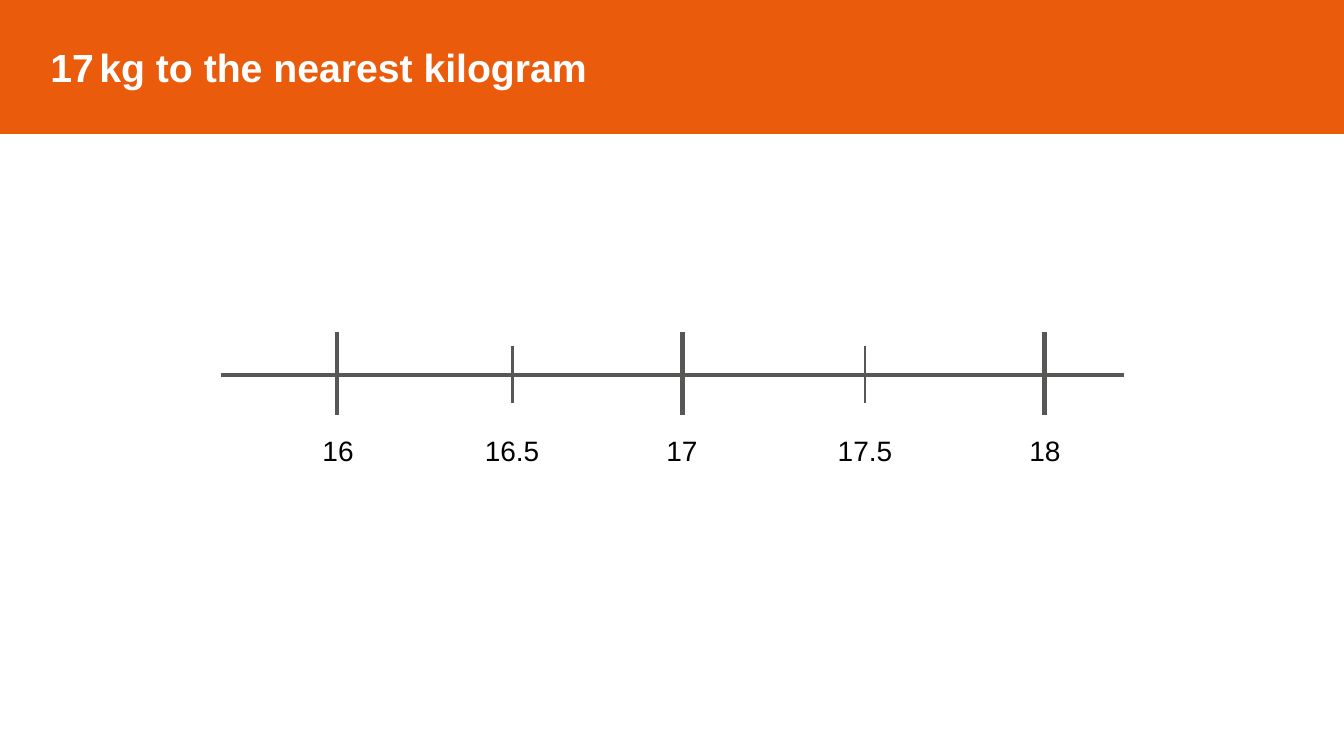
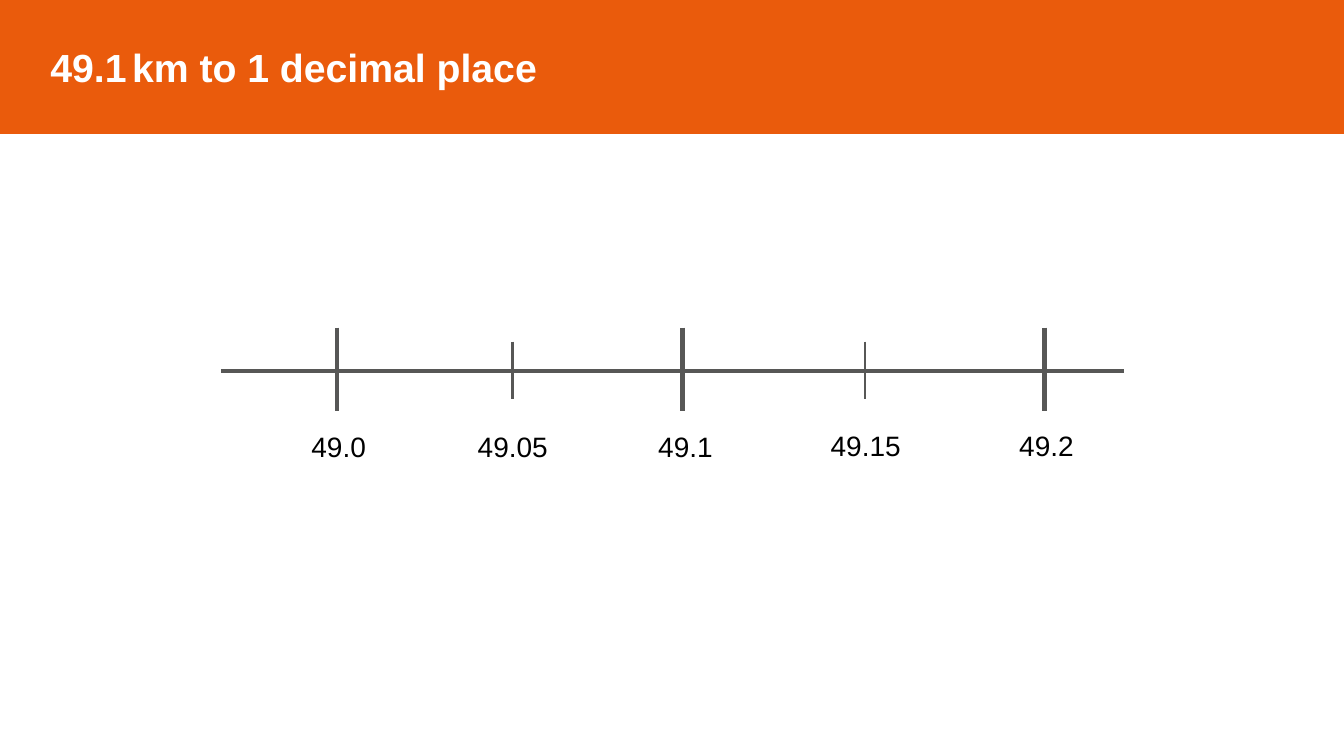
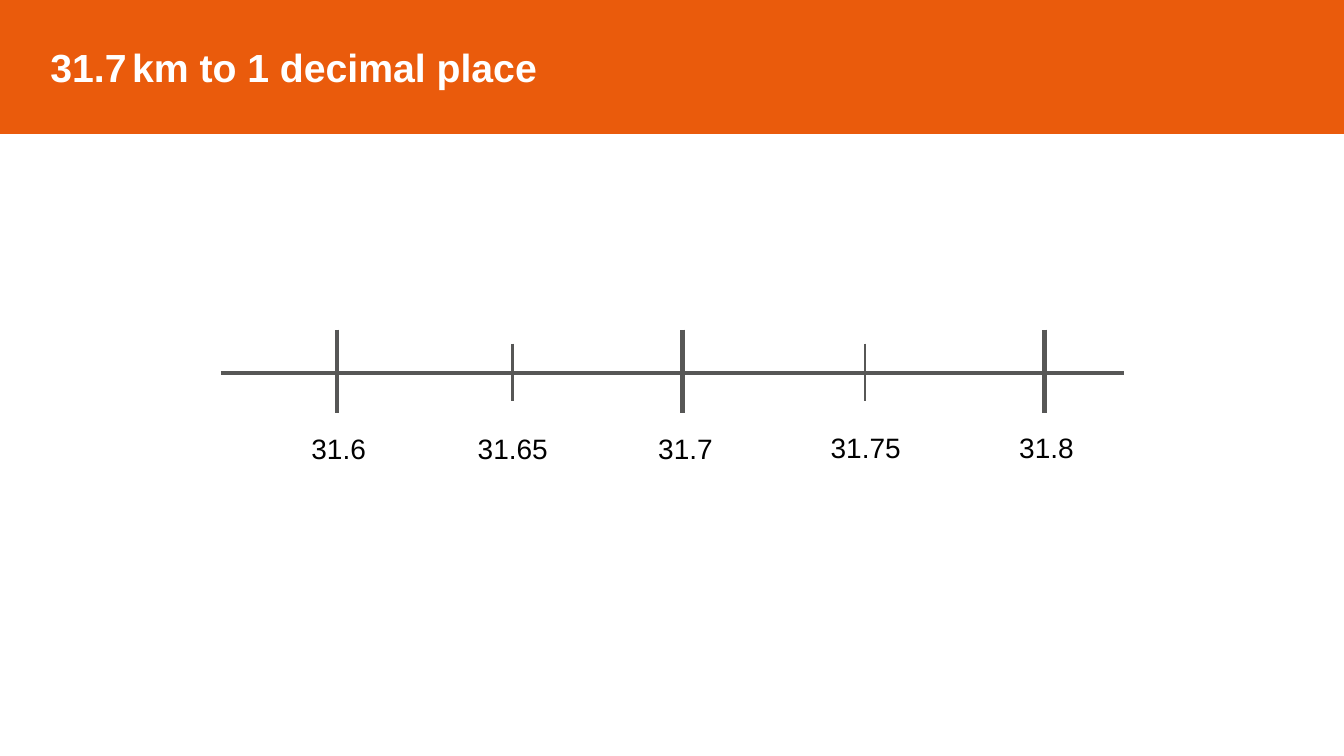
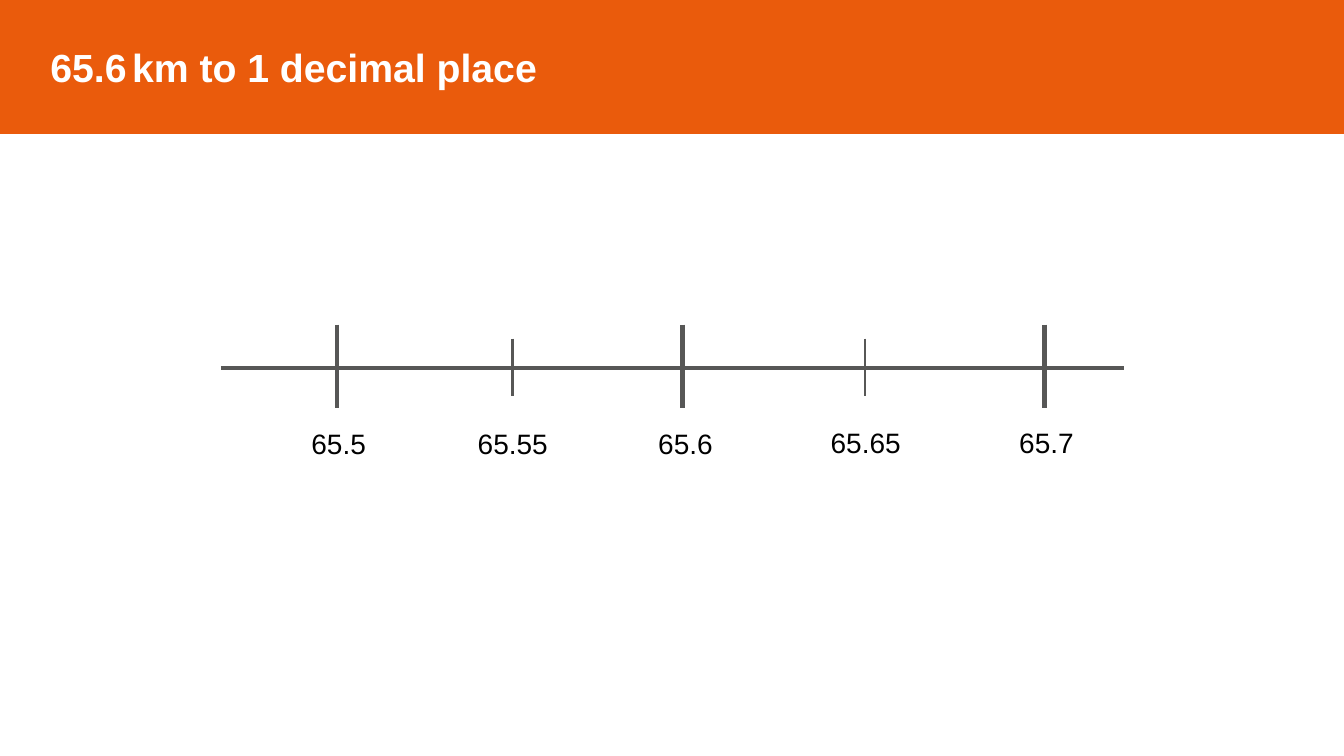
"""Build four slides that show rounded measurements on number lines."""
import pptx
import pptx.dml.color
import pptx.enum.shapes
import pptx.enum.text
import pptx.oxml
import pptx.util

PX = 9144
FONT = "Arial"
COLOURS = {"band": "EA5B0C", "line": "575756", "title": "FFFFFF", "label": "000000"}
SLIDE_WIDTH, SLIDE_HEIGHT, BAND_HEIGHT = 1333, 750, 132
AXIS_LEFT, AXIS_RIGHT = 219, 1115
TICKS = (334, 508, 677, 858, 1036)
MAJOR_TICK = {"above": 43, "below": 40, "weight": 3}
MINOR_TICK = {"above": 29, "below": 28, "weight": 2}
LABEL_DROP, LABEL_HEIGHT = 53, 44
LABEL_WIDTHS = {2: 51, 4: 75, 5: 90}
WHOLE_LEFTS = (310, 471, 651, 821, 1011)
DECIMAL_LEFTS = (299, 464, 643, 814, 1001)
WHOLE_DROPS = (LABEL_DROP,) * 5
DECIMAL_DROPS = (LABEL_DROP,) * 3 + (LABEL_DROP - 1,) * 2
SLIDES = (
    ("17", "kg to the nearest kilogram", 372, ("16", "16.5", "17", "17.5", "18")),
    ("49.1", "km to 1 decimal place", 368, ("49.0", "49.05", "49.1", "49.15", "49.2")),
    ("31.7", "km to 1 decimal place", 370, ("31.6", "31.65", "31.7", "31.75", "31.8")),
    ("65.6", "km to 1 decimal place", 365, ("65.5", "65.55", "65.6", "65.65", "65.7")),
)


def px(*lengths):
    """Turn px lengths into EMU."""
    return [pptx.util.Emu(length * PX) for length in lengths]


def colour(name):
    """Look up a named colour."""
    return pptx.dml.color.RGBColor.from_string(COLOURS[name])


def add_text(para, text, *, size, fill, bold=False):
    """Add a formatted span of text to a paragraph."""
    span = para.add_run()
    span.text = text
    span.font.name = FONT
    span.font.size = pptx.util.Pt(size)
    span.font.bold = bold
    span.font.color.rgb = colour(fill)


def add_title_band(slide, value, wording):
    """Add the full-width band with a narrow space between value and unit."""
    band = slide.shapes.add_shape(
        pptx.enum.shapes.MSO_SHAPE.RECTANGLE, *px(0, 0, SLIDE_WIDTH, BAND_HEIGHT)
    )
    band.shadow.inherit = False
    band.fill.solid()
    band.fill.fore_color.rgb = colour("band")
    band.line.color.rgb = colour("band")
    band.line.width = pptx.util.Pt(1)
    frame = band.text_frame
    frame.word_wrap = True
    frame.margin_left = px(50)[0]
    frame.vertical_anchor = pptx.enum.text.MSO_ANCHOR.MIDDLE
    para = frame.paragraphs[0]
    para.alignment = pptx.enum.text.PP_ALIGN.LEFT
    for text, size in ((value, 28), (" ", 14), (wording, 28)):
        add_text(para, text, size=size, fill="title", bold=True)


def add_line(shapes, start, end, weight):
    """Add a straight grey line between two points."""
    line = shapes.add_connector(
        pptx.enum.shapes.MSO_CONNECTOR.STRAIGHT, *px(*start, *end)
    )
    line.line.color.rgb = colour("line")
    line.line.width = pptx.util.Pt(weight)
    properties = line._element.spPr
    properties.append(properties.makeelement(pptx.oxml.ns.qn("a:effectLst"), {}))


def add_tick(shapes, x, axis, above, below, weight):
    """Add an upright tick across the axis."""
    add_line(shapes, (x, axis - above), (x, axis + below), weight)


def add_label(shapes, left, top, text):
    """Add a number below a tick."""
    box = shapes.add_textbox(*px(left, top, LABEL_WIDTHS[len(text)], LABEL_HEIGHT))
    frame = box.text_frame
    frame.word_wrap = False
    frame.auto_size = pptx.enum.text.MSO_AUTO_SIZE.SHAPE_TO_FIT_TEXT
    add_text(frame.paragraphs[0], text, size=20, fill="label")


def add_number_line(slide, axis, labels):
    """Add the grouped axis with alternating ticks and their labels."""
    shapes = slide.shapes.add_group_shape().shapes
    add_line(shapes, (AXIS_LEFT, axis), (AXIS_RIGHT, axis), 3)
    for index, x in enumerate(TICKS):
        add_tick(shapes, x, axis, **(MINOR_TICK if index % 2 else MAJOR_TICK))
    decimal = "." in labels[0]
    lefts = DECIMAL_LEFTS if decimal else WHOLE_LEFTS
    drops = DECIMAL_DROPS if decimal else WHOLE_DROPS
    for left, drop, label in zip(lefts, drops, labels):
        add_label(shapes, left, axis + drop, label)


def main():
    """Build and save the deck."""
    deck = pptx.Presentation()
    deck.slide_width, deck.slide_height = px(SLIDE_WIDTH, SLIDE_HEIGHT)
    for value, wording, axis, labels in SLIDES:
        slide = deck.slides.add_slide(deck.slide_layouts[6])
        add_title_band(slide, value, wording)
        add_number_line(slide, axis, labels)
    deck.save("out.pptx")


if __name__ == "__main__":
    main()
